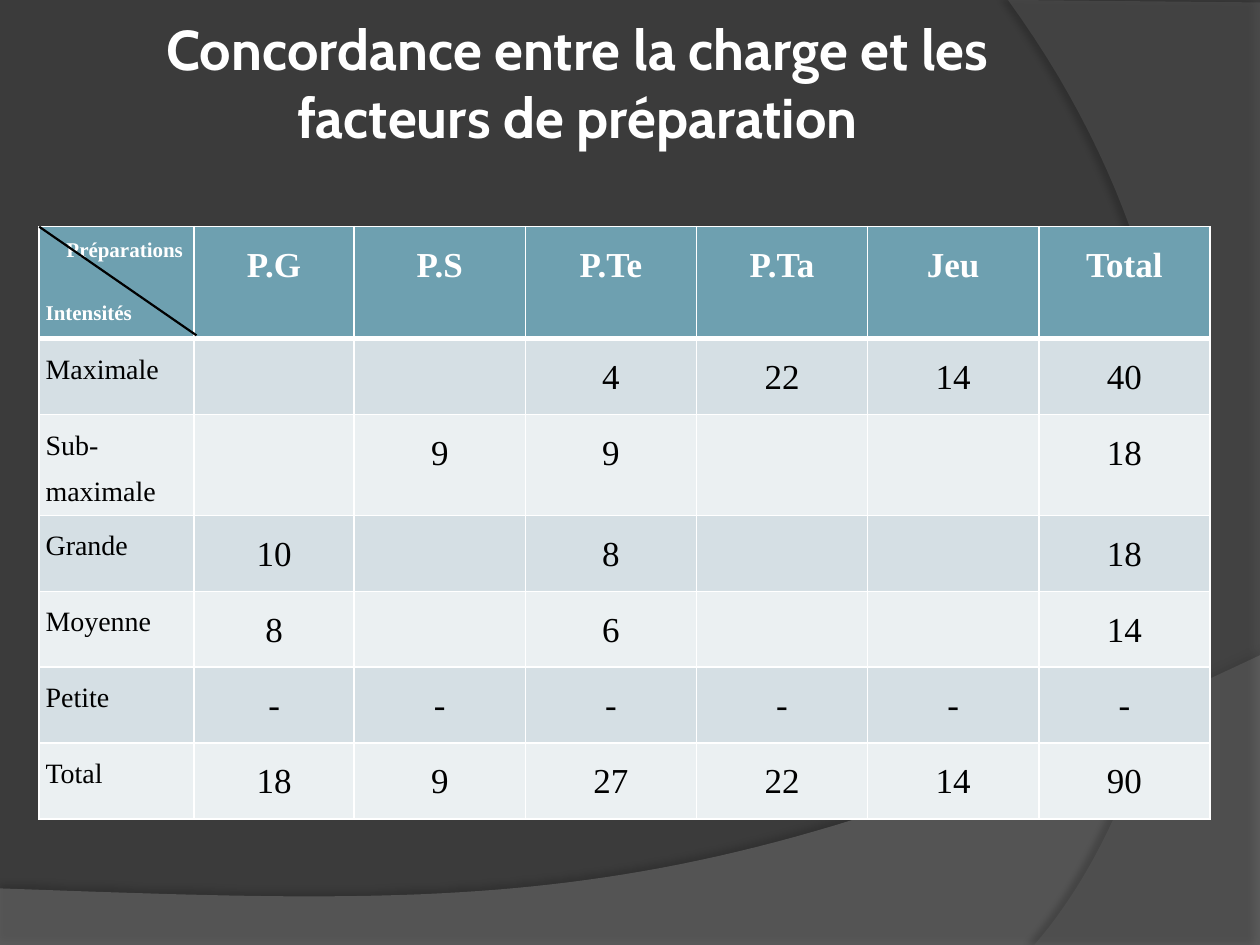
from lxml import etree
from pptx import Presentation
from pptx.dml.color import RGBColor as RGB
from pptx.enum.shapes import MSO_CONNECTOR as CONN
from pptx.enum.text import MSO_ANCHOR as ANCHOR, PP_ALIGN as ALIGN
from pptx.oxml import parse_xml
from pptx.oxml.ns import nsdecls, qn
from pptx.util import Cm, Pt

COLORS = {
    "background": "3B3B3B", "wave": "7F7F7F", "ribbon": "5E5E5E",
    "header": "6EA0B0", "odd": "D5DFE4", "even": "EBF0F2",
    "white": "FFFFFF", "black": "000000",
}
SERIF = "Times New Roman"


def rgb(name):
    return RGB.from_string(COLORS[name])


def write(p, text, size=20, color="black", bold=False, font=SERIF,
          align=ALIGN.CENTER, spacing=1.5, before=0, indent=0):
    """Fill paragraph p with one formatted run."""
    p.alignment, p.line_spacing, p.space_before = align, spacing, Pt(before)
    if indent:
        pPr = p._p.get_or_add_pPr()
        pPr.set("marL", str(Cm(indent)))
        pPr.set("indent", "0")
    r = p.add_run()
    r.text = text
    r.font.size, r.font.bold, r.font.name = Pt(size), bold, font
    r.font.color.rgb = rgb(color)


prs = Presentation()
prs.slide_width, prs.slide_height = Cm(25.4), Cm(19.05)
slide = prs.slides.add_slide(prs.slide_layouts[6])
slide.background.fill.solid()
slide.background.fill.fore_color.rgb = rgb("background")

# Background bands: straight corners, then a Bezier edge from the last corner.
# Shadow: opacity %, distance in points, direction in degrees.
bands = [
    ("wave", 45, [(0, 17.91), (0, 19.05), (25.4, 19.05), (25.4, 13.21)],
     [(14.2, 18.52), (9.93, 18.26), (0, 17.91)], (35, 3.5, 270)),
    ("ribbon", 40, [(25.4, 0.05), (25.4, 19.05), (20.85, 19.05)],
     [(23.75, 15.72), (25.86, 7.62), (20.32, 0)], (45, 4, 180)),
]
STEPS = 60
for color, opacity, corners, curve, (dark, dist, angle) in bands:
    points = list(corners)
    for i in range(1, STEPS + 1):
        t = i / STEPS
        weights = ((1 - t) ** 3, 3 * t * (1 - t) ** 2, 3 * t * t * (1 - t), t ** 3)
        controls = [corners[-1]] + curve
        points.append([sum(w * c[k] for w, c in zip(weights, controls)) for k in (0, 1)])
    points = [(Cm(x), Cm(y)) for x, y in points]
    builder = slide.shapes.build_freeform(*points[0])
    builder.add_line_segments(points[1:], close=True)
    sp = builder.convert_to_shape()
    sp.fill.solid()
    sp.fill.fore_color.rgb = rgb(color)
    sp.line.fill.background()
    srgb = sp._element.spPr.find(qn("a:solidFill"))[0]
    etree.SubElement(srgb, qn("a:alpha")).set("val", str(opacity * 1000))
    sp._element.spPr.append(parse_xml(
        f'<a:effectLst {nsdecls("a")}><a:outerShdw blurRad="{Pt(4)}" dist="{Pt(dist)}" '
        f'dir="{angle * 60000}" rotWithShape="0"><a:srgbClr val="{COLORS["black"]}">'
        f'<a:alpha val="{dark * 1000}"/></a:srgbClr></a:outerShdw></a:effectLst>'))

# Title
tf = slide.shapes.add_textbox(Cm(1.27), Cm(0.13), Cm(20.75), Cm(3.05)).text_frame
tf.word_wrap = True
tf.vertical_anchor = ANCHOR.MIDDLE
tf.margin_left = tf.margin_right = tf.margin_top = tf.margin_bottom = Cm(0.13)
write(tf.paragraphs[0], "Concordance entre la charge et les facteurs de préparation",
      size=32, color="white", bold=True, font="Cabin", spacing=1)

# Load table
rows = [
    ["", "P.G", "P.S", "P.Te", "P.Ta", "Jeu", "Total"],
    ["Maximale", "", "", "4", "22", "14", "40"],
    ["Sub-maximale", "", "9", "9", "", "", "18"],
    ["Grande", "10", "", "8", "", "", "18"],
    ["Moyenne", "8", "", "6", "", "", "14"],
    ["Petite", "-", "-", "-", "-", "-", "-"],
    ["Total", "18", "9", "27", "22", "14", "90"],
]
widths = [3.12, 3.23] + [3.45] * 5
heights = [2.26] + [1.53] * 6
left, top = 0.79, 4.57
table = slide.shapes.add_table(len(rows), len(widths), Cm(left), Cm(top),
                               Cm(sum(widths)), Cm(sum(heights))).table
for column, width in zip(table.columns, widths):
    column.width = Cm(width)
for i, (row, height) in enumerate(zip(rows, heights)):
    table.rows[i].height = Cm(height)
    borders = {"lnL": 1, "lnR": 1, "lnT": 3 if i == 1 else 1, "lnB": 3 if i == 0 else 1}
    for j, text in enumerate(row):
        cell = table.cell(i, j)
        cell.margin_left = cell.margin_right = Cm(0.13)
        cell.margin_top = cell.margin_bottom = 0
        tcPr = cell._tc.get_or_add_tcPr()
        for side, width in borders.items():
            tcPr.append(parse_xml(
                f'<a:{side} {nsdecls("a")} w="{Pt(width)}"><a:solidFill>'
                f'<a:srgbClr val="{COLORS["white"]}"/></a:solidFill></a:{side}>'))
        cell.fill.solid()
        cell.fill.fore_color.rgb = rgb("header" if i == 0 else "odd" if i % 2 else "even")
        if not text:
            continue
        p = cell.text_frame.paragraphs[0]
        if i == 0:
            write(p, text, color="white", bold=True)
        elif j == 0:
            write(p, text, size=16, align=ALIGN.JUSTIFY)
        else:
            write(p, text)

# Corner cell names both axes, split by a diagonal
tf = table.cell(0, 0).text_frame
axis = dict(size=12, color="white", bold=True, align=ALIGN.JUSTIFY)
write(tf.paragraphs[0], "Préparations", indent=0.42, **axis)
write(tf.add_paragraph(), "Intensités", before=16, **axis)

diagonal = slide.shapes.add_connector(CONN.STRAIGHT, Cm(left), Cm(top), Cm(3.96), Cm(6.76))
diagonal.line.color.rgb = rgb("black")
diagonal.line.width = Pt(1.25)
etree.SubElement(diagonal._element.spPr, qn("a:effectLst"))

prs.save("out.pptx")
